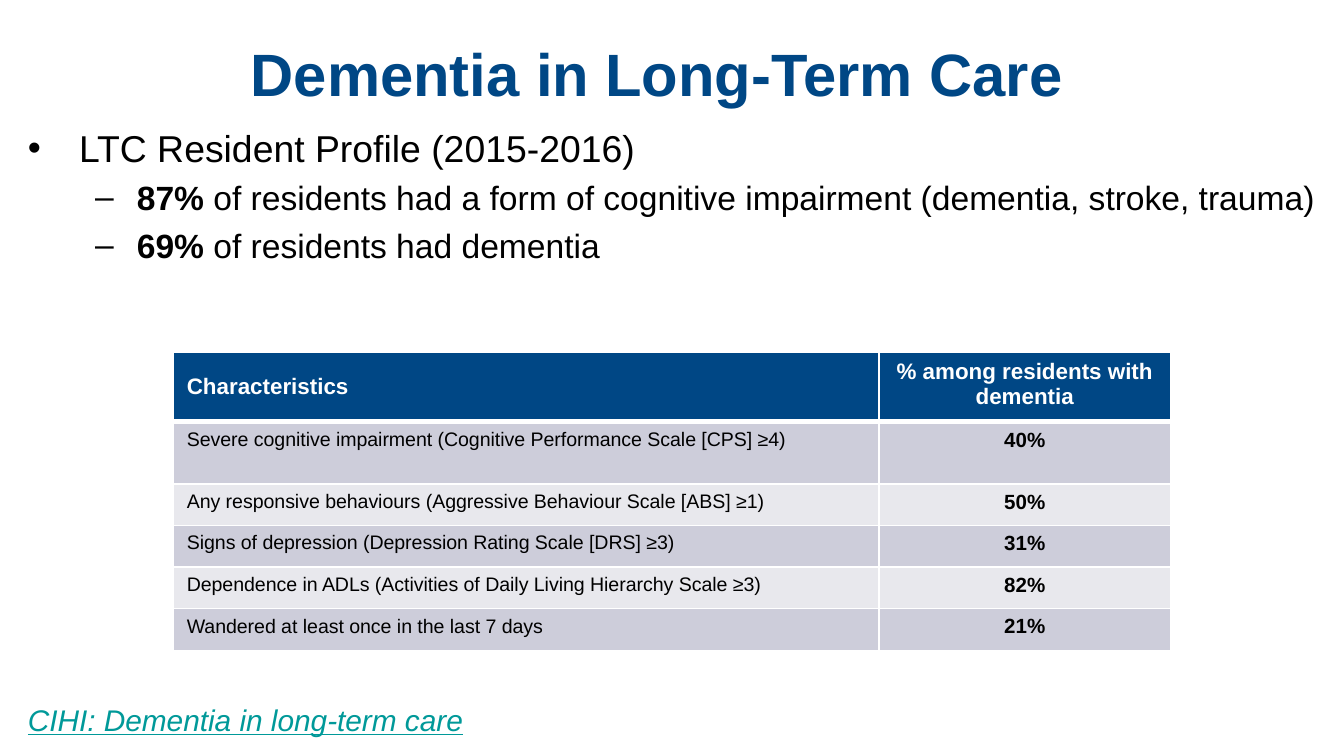
from lxml import etree
from pptx import Presentation
from pptx.dml.color import RGBColor
from pptx.enum.text import MSO_ANCHOR, PP_ALIGN
from pptx.oxml.ns import qn
from pptx.util import Inches, Pt

LEFT, MID = PP_ALIGN.LEFT, PP_ALIGN.CENTER
TOP, CENTER = MSO_ANCHOR.TOP, MSO_ANCHOR.MIDDLE
COLORS = {"navy": "004785", "black": "000000", "white": "FFFFFF",
          "teal": "009999", "dark": "CDCDDA", "light": "E8E8ED"}


def add_run(para, text, size, color, bold=False):
    run = para.add_run()
    run.text = text
    font = run.font
    font.name = "Arial"
    font.size = Pt(size)
    font.bold = bold
    font.color.rgb = RGBColor.from_string(COLORS[color])
    return run


def add_box(left, top, width, height, anchor=TOP):
    box = slide.shapes.add_textbox(Inches(left), Inches(top), Inches(width), Inches(height))
    frame = box.text_frame
    frame.word_wrap = True
    frame.vertical_anchor = anchor
    return frame


prs = Presentation()
prs.slide_width = Inches(10)
prs.slide_height = Inches(10) * 9 // 16
slide = prs.slides.add_slide(prs.slide_layouts[6])

title = add_box(0, 0.07, 9.78, 0.94, CENTER).paragraphs[0]
title.alignment = MID
add_run(title, "Dementia in Long-Term Care", 32, "navy", True)

body = add_box(0.11, 0.88, 9.78, 3.47)
body.margin_right = Inches(0.05)
points = [
    (0, "•", 0.38, 0.38, 20, "", "LTC Resident Profile (2015-2016)"),
    (1, "–", 0.81, 0.31, 18, "87%",
     " of residents had a form of cognitive impairment (dementia, stroke, trauma)"),
    (1, "–", 0.81, 0.31, 18, "69%", " of residents had dementia"),
]
for i, (level, mark, indent, hang, size, lead, text) in enumerate(points):
    para = body.add_paragraph() if i else body.paragraphs[0]
    para.level = level
    if i:
        para.space_before = Pt(4)
    props = para._p.get_or_add_pPr()
    props.set("marL", str(Inches(indent)))
    props.set("indent", str(-Inches(hang)))
    etree.SubElement(props, qn("a:buFont")).set("typeface", "Arial")
    etree.SubElement(props, qn("a:buChar")).set("char", mark)
    if lead:
        add_run(para, lead, size, "black", True)
    add_run(para, text, size, "black")

rows = [
    ("Characteristics", "% among residents with dementia"),
    ("Severe cognitive impairment (Cognitive Performance Scale [CPS] ≥4)", "40%"),
    ("Any responsive behaviours (Aggressive Behaviour Scale [ABS] ≥1)", "50%"),
    ("Signs of depression (Depression Rating Scale [DRS] ≥3)", "31%"),
    ("Dependence in ADLs (Activities of Daily Living Hierarchy Scale ≥3)", "82%"),
    ("Wandered at least once in the last 7 days", "21%"),
]
table = slide.shapes.add_table(len(rows), 2, Inches(1.29), Inches(2.62),
                               Inches(7.42), Inches(2.22)).table
for col, width in zip(table.columns, (5.25, 2.17)):
    col.width = Inches(width)
for row, height in zip(table.rows, (0.52, 0.46, 0.31, 0.31, 0.31, 0.31)):
    row.height = Inches(height)

for r, texts in enumerate(rows):
    head = r == 0
    fill = "navy" if head else "dark" if r % 2 else "light"
    for c, text in enumerate(texts):
        cell = table.cell(r, c)
        props = cell._tc.get_or_add_tcPr()
        for side in "LRTB":
            thick = (head and side == "B") or (r == 1 and side == "T")
            line = etree.SubElement(props, qn("a:ln" + side))
            line.set("w", str(Pt(3 if thick else 1)))
            solid = etree.SubElement(line, qn("a:solidFill"))
            etree.SubElement(solid, qn("a:srgbClr")).set("val", COLORS["white"])
        cell.fill.solid()
        cell.fill.fore_color.rgb = RGBColor.from_string(COLORS[fill])
        cell.vertical_anchor = CENTER if head and c == 0 else TOP
        para = cell.text_frame.paragraphs[0]
        para.alignment = MID if c else LEFT
        size = 12 if head else 11 if c else 10.5
        add_run(para, text, size, "white" if head else "black", head or c == 1)

source = add_box(0.11, 5.17, 4.93, 0.37).paragraphs[0]
cite = add_run(source, "CIHI: Dementia in long-term care", 16, "teal")
cite.font.italic = True
cite.font.underline = True

prs.save("out.pptx")
